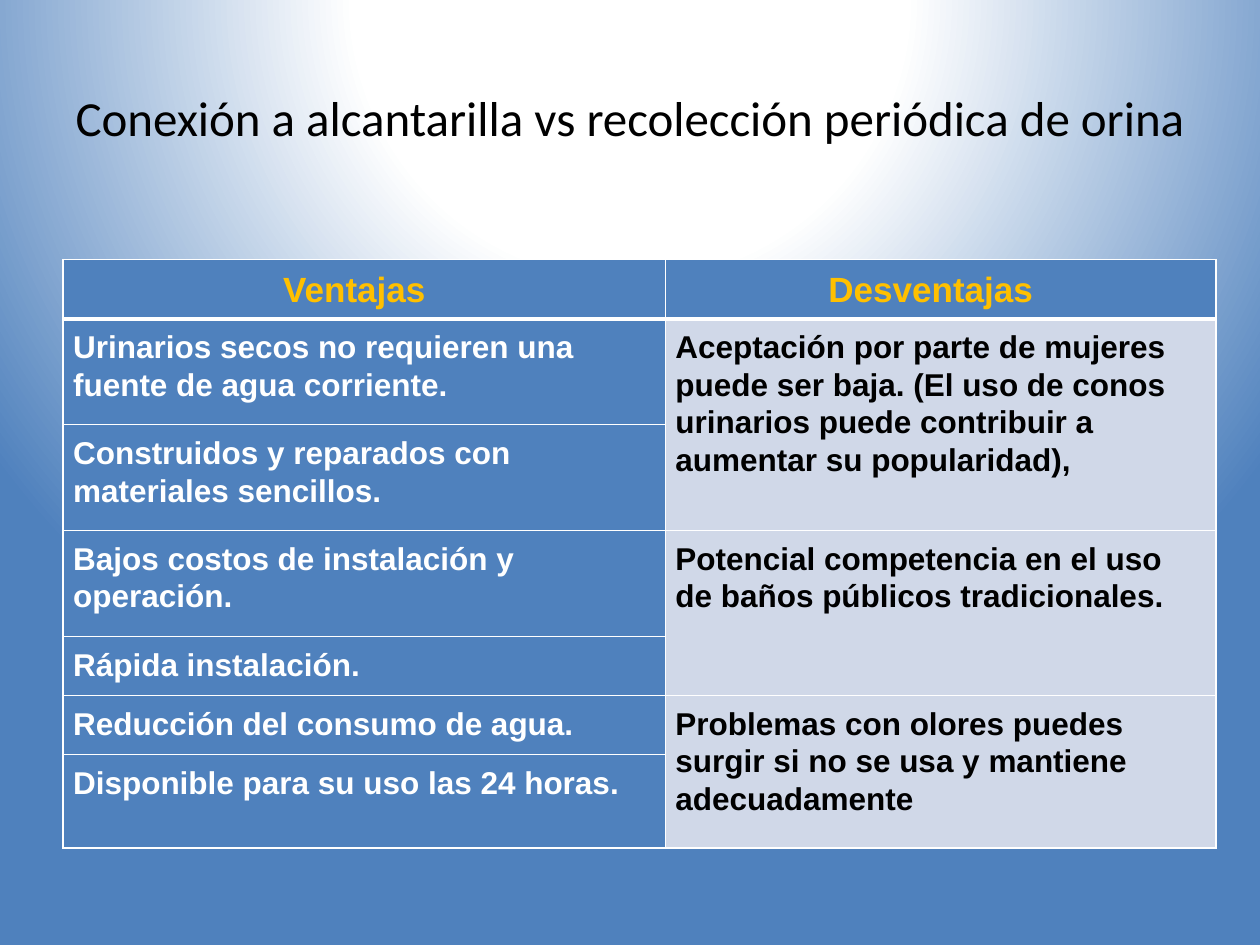
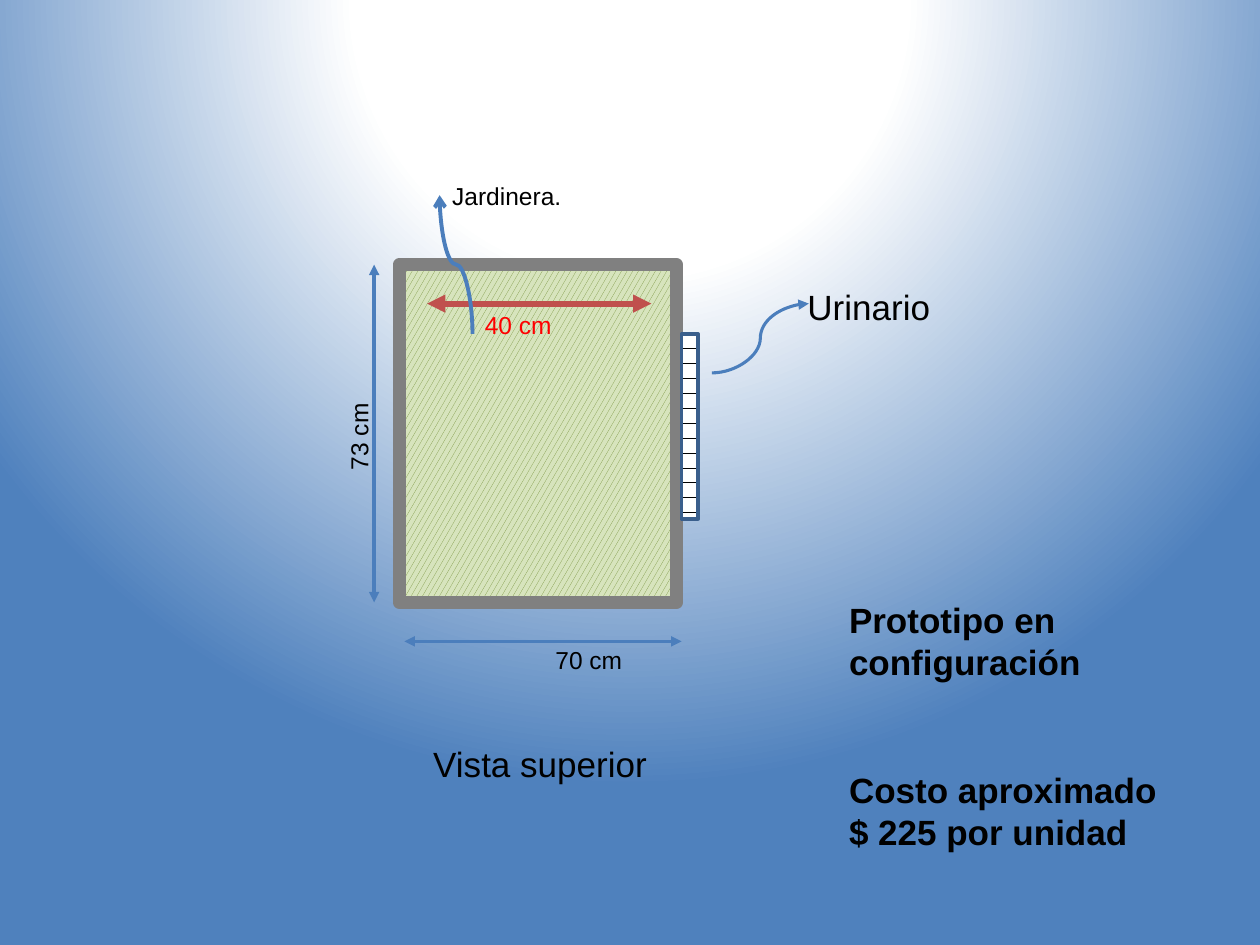
"""Build two slides on dry urinals: a pros and cons table and a plan view."""
from lxml.etree import SubElement
from pptx import Presentation
from pptx.dml.color import RGBColor
from pptx.enum.dml import MSO_PATTERN as PATTERN
from pptx.enum.shapes import MSO_CONNECTOR as CONNECTOR, MSO_SHAPE as SHAPE
from pptx.enum.text import MSO_ANCHOR as ANCHOR, PP_ALIGN as ALIGN
from pptx.oxml import parse_xml
from pptx.oxml.ns import nsdecls, qn
from pptx.util import Pt

BLUE, PALE, WHITE, BLACK = "4F81BD", "D0D8E8", "FFFFFF", "000000"
GOLD, RED, BRICK, ARROW_BLUE = "FFC000", "FF0000", "C0504D", "4B7EBC"
GRADIENT = [(0, WHITE), (35, WHITE), (100, BLUE)]

TITLE = "Conexión a alcantarilla vs recolección periódica de orina"
HEADINGS = ["Ventajas", "Desventajas"]
ADVANTAGES = [
    "Urinarios secos no requieren una fuente de agua corriente.",
    "Construidos y reparados con materiales sencillos.",
    "Bajos costos de instalación y operación.",
    "Rápida instalación.",
    "Reducción del consumo de agua.",
    "Disponible para su uso las 24 horas.",
]
DISADVANTAGES = [
    "Aceptación por parte de mujeres puede ser baja. (El uso de conos urinarios "
    "puede contribuir a aumentar su popularidad),",
    "Potencial competencia en el uso de baños públicos tradicionales.",
    "Problemas con olores puedes surgir si no se usa y mantiene adecuadamente",
]
COLUMN_WIDTHS = [344.2, 314.6]
ROW_HEIGHTS = [33.8, 60.5, 60.5, 60.5, 33.8, 33.8, 53.3]

SMALL = {"size": 14}
STRONG = {"bold": True}
LABELS = [
    ("Vista superior", (240.5, 420.5, 333.4, 31.5), {}, 0),
    ("70 cm", (310.3, 365, 124.6, 24.5), SMALL, 0),
    ("73 cm", (164.9, 218.9, 85, 28.8), SMALL, 270),
    ("Urinario", (454.3, 159.8, 110.9, 31.7), {}, 0),
    ("40 cm", (270, 173.5, 90.7, 28.8), SMALL | {"color": RED}, 0),
    ("Jardinera.", (251.3, 100.1, 166.3, 28.8), SMALL, 0),
    ("Costo aproximado $ 225 por unidad", (478.1, 435.6, 190.1, 55.4), STRONG, 0),
    ("Prototipo en configuración", (478.1, 338.4, 190.1, 55.4), STRONG, 0),
]
PLAN_PARTS = [
    ((228.2, 151.2, 158.4, 193), PATTERN.LARGE_CONFETTI, "77933C", "D7E4BD", "808080", 7.5),
    ((389.5, 190.8, 9.4, 105.8), PATTERN.HORIZONTAL_BRICK, BLACK, WHITE, "3A5F8C", 2),
]
BOTH_ENDS = {"headEnd": "triangle", "tailEnd": "triangle"}
ARROWS = [
    (CONNECTOR.STRAIGHT, (231.1, 366.5, 389.5, 366.5), ARROW_BLUE, 2, BOTH_ENDS, 0),
    (CONNECTOR.STRAIGHT, (213.8, 151.2, 213.8, 344.2), ARROW_BLUE, 2, BOTH_ENDS, 0),
    (CONNECTOR.STRAIGHT, (244.1, 173.5, 372.2, 173.5), BRICK, 3.5, BOTH_ENDS, 0),
    (CONNECTOR.CURVE, (406.8, 213.1, 462.2, 173.5), ARROW_BLUE, 1.75, {"tailEnd": "triangle"}, 0),
    (CONNECTOR.CURVE, (221, 160.6, 300.2, 141.8), ARROW_BLUE, 2.25, {"tailEnd": "arrow"}, 270),
]


def rgb(color):
    return RGBColor.from_string(color)


def points(values):
    return [Pt(value) for value in values]


def set_line(line, color, width):
    line.color.rgb = rgb(color)
    line.width = Pt(width)


def write(frame, text, size=20, color=BLACK, name="Arial", bold=False, **paragraph_format):
    frame.word_wrap = True
    paragraph = frame.paragraphs[0]
    for key, value in paragraph_format.items():
        setattr(paragraph, key, value)
    run = paragraph.add_run()
    run.text = text
    for key, value in {"size": Pt(size), "name": name, "bold": bold}.items():
        setattr(run.font, key, value)
    run.font.color.rgb = rgb(color)


def add_label(slide, text, box, style, rotation=0):
    shape = slide.shapes.add_textbox(*points(box))
    shape.rotation = rotation
    write(shape.text_frame, text, **style)
    return shape


def set_background(master):
    master.background.fill.solid()
    properties = master.element.xpath(".//p:bgPr")[0]
    stops = "".join(
        f'<a:gs pos="{position * 1000}"><a:srgbClr val="{color}"/></a:gs>'
        for position, color in GRADIENT
    )
    gradient = parse_xml(
        f'<a:gradFill rotWithShape="1" {nsdecls("a")}><a:gsLst>{stops}</a:gsLst>'
        '<a:path path="circle"><a:fillToRect l="50000" t="-80000" r="50000" b="180000"/>'
        "</a:path></a:gradFill>"
    )
    properties.replace(properties[0], gradient)


def set_borders(cell, row):
    properties = cell._tc.get_or_add_tcPr()
    widths = {"lnL": 1, "lnR": 1, "lnT": 3 if row == 1 else 1, "lnB": 3 if row == 0 else 1}
    for index, (tag, width) in enumerate(widths.items()):
        border = parse_xml(
            f'<a:{tag} w="{Pt(width)}" {nsdecls("a")}><a:solidFill>'
            f'<a:srgbClr val="{WHITE}"/></a:solidFill></a:{tag}>'
        )
        properties.insert(index, border)


def fill_cell(cell, text, **style):
    margins = {"margin_left": 5.8, "margin_top": 5, "margin_right": 5.8, "margin_bottom": 0}
    if "alignment" in style:
        margins["margin_right"] = 17
    for key, value in margins.items():
        setattr(cell, key, Pt(value))
    write(cell.text_frame, text, bold=True, line_spacing=1.07, space_after=Pt(8.1), **style)


def add_comparison(slide):
    size = sum(COLUMN_WIDTHS), sum(ROW_HEIGHTS)
    frame = slide.shapes.add_table(len(ROW_HEIGHTS), len(COLUMN_WIDTHS), *points((36, 148.4, *size)))
    table = frame.table
    for column, width in zip(table.columns, COLUMN_WIDTHS):
        column.width = Pt(width)
    for row, height in zip(table.rows, ROW_HEIGHTS):
        row.height = Pt(height)
    for row in range(len(ROW_HEIGHTS)):
        for column in range(len(COLUMN_WIDTHS)):
            cell = table.cell(row, column)
            cell.fill.solid()
            cell.fill.fore_color.rgb = rgb(PALE if row and column else BLUE)
            set_borders(cell, row)
    for column, heading in enumerate(HEADINGS):
        fill_cell(table.cell(0, column), heading, color=GOLD, alignment=ALIGN.CENTER)
    for row, text in enumerate(ADVANTAGES, 1):
        fill_cell(table.cell(row, 0), text, size=18, color=WHITE)
    for index, text in enumerate(DISADVANTAGES):
        top = 1 + 2 * index
        table.cell(top, 1).merge(table.cell(top + 1, 1))
        fill_cell(table.cell(top, 1), text, size=18)


def add_part(slide, box, pattern, foreground, background, line_color, width):
    shape = slide.shapes.add_shape(SHAPE.RECTANGLE, *points(box))
    shape.shadow.inherit = False
    shape.fill.patterned()
    shape.fill.pattern = pattern
    shape.fill.fore_color.rgb = rgb(foreground)
    shape.fill.back_color.rgb = rgb(background)
    set_line(shape.line, line_color, width)


def add_arrow(slide, kind, ends, color, width, heads, rotation):
    connector = slide.shapes.add_connector(kind, *points(ends))
    set_line(connector.line, color, width)
    properties = connector._element.spPr
    for tag, head in heads.items():
        SubElement(properties.find(qn("a:ln")), qn(f"a:{tag}"), type=head)
    SubElement(properties, qn("a:effectLst"))
    if rotation:
        properties.find(qn("a:xfrm")).set("rot", str(rotation * 60000))


def main():
    presentation = Presentation()
    presentation.slide_width, presentation.slide_height = points((720, 540))
    set_background(presentation.slide_master)
    blank = presentation.slide_layouts[6]

    comparison = presentation.slides.add_slide(blank)
    title_style = {"size": 28, "name": "Calibri", "alignment": ALIGN.CENTER}
    title = add_label(comparison, TITLE, (36, 21.6, 648, 90), title_style)
    title.text_frame.vertical_anchor = ANCHOR.MIDDLE
    add_comparison(comparison)

    plan = presentation.slides.add_slide(blank)
    for part in PLAN_PARTS:
        add_part(plan, *part)
    for arrow in ARROWS:
        add_arrow(plan, *arrow)
    for label in LABELS:
        add_label(plan, *label)
    presentation.save("out.pptx")


if __name__ == "__main__":
    main()
